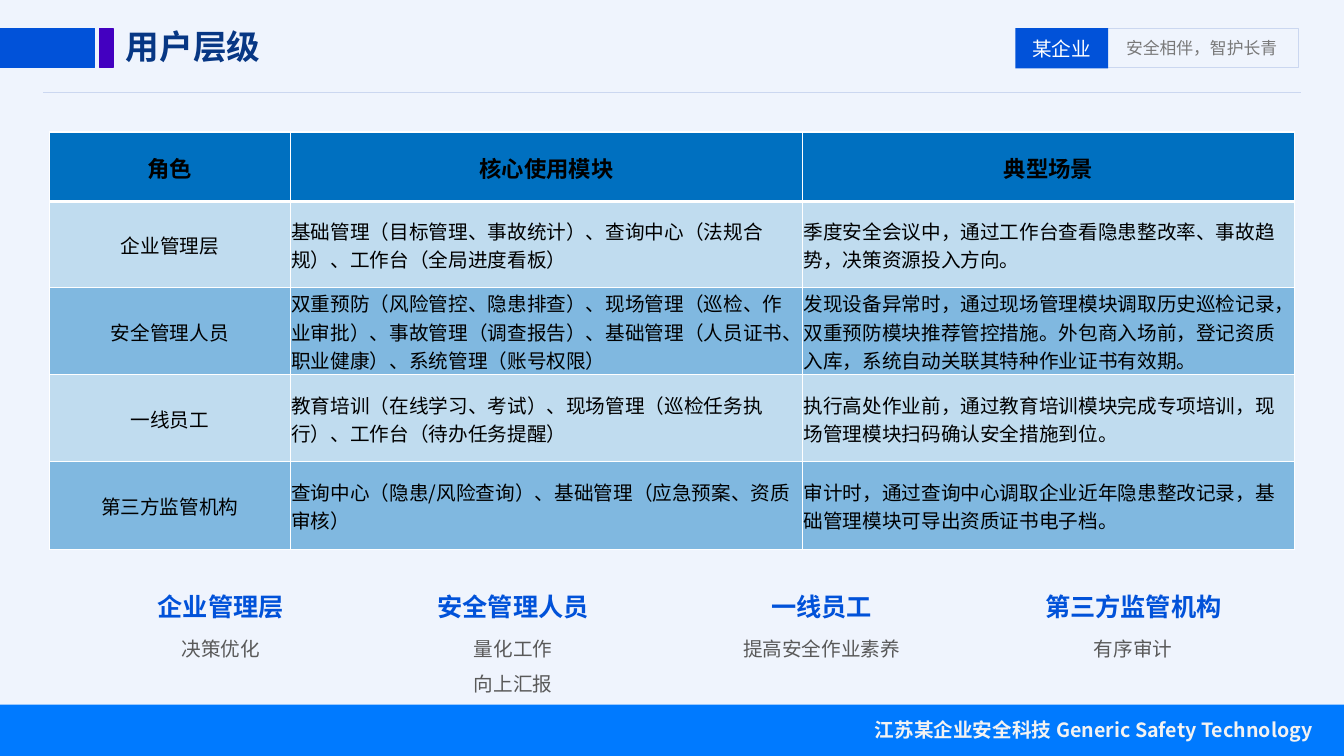
"""Build the user-level slide: roles, their modules and scenarios, and the benefits for each."""
from dataclasses import dataclass
from typing import Optional

from pptx import Presentation
from pptx.dml.color import RGBColor
from pptx.enum.shapes import MSO_CONNECTOR, MSO_SHAPE
from pptx.enum.text import MSO_ANCHOR, MSO_AUTO_SIZE, PP_ALIGN
from pptx.oxml.ns import qn
from pptx.oxml.xmlchemy import OxmlElement
from pptx.util import Inches, Pt


@dataclass(frozen=True)
class Theme:
    background: str = "EFF4FD"
    primary: str = "0152D9"
    accent: str = "4300C0"
    footer: str = "007AFF"
    footer_text: str = "F2F2F2"
    rule: str = "CBD7F0"
    title: str = "073784"
    slogan: str = "787878"
    detail: str = "595959"
    header: str = "0070C0"
    bands: tuple[str, str] = ("C0DCEF", "80B8E0")
    black: str = "000000"
    white: str = "FFFFFF"
    latin: str = "Arial"
    cjk: str = "Noto Sans CJK SC"
    title_size: float = 24
    heading_size: float = 18
    header_size: float = 16
    body_size: float = 14
    slogan_size: float = 12


THEME = Theme()


@dataclass(frozen=True)
class Style:
    size: float
    color: str
    font: str = THEME.cjk
    bold: bool = False
    align: PP_ALIGN = PP_ALIGN.LEFT
    spacing: Optional[float] = None


@dataclass(frozen=True)
class Bar:
    left: float
    top: float
    width: float
    height: float
    fill: Optional[str] = None
    line: Optional[str] = None
    label: str = ""


@dataclass(frozen=True)
class Label:
    left: float
    top: float
    width: float
    height: float
    lines: tuple[str, ...]
    style: Style
    wrap: bool = True


@dataclass(frozen=True)
class Benefit:
    left: float
    role: str
    gains: tuple[str, ...]


HEADER_STYLE = Style(THEME.header_size, THEME.black, bold=True, align=PP_ALIGN.CENTER)
ROLE_STYLE = Style(THEME.body_size, THEME.black, align=PP_ALIGN.CENTER)
CELL_STYLE = Style(THEME.body_size, THEME.black)
BADGE_STYLE = Style(THEME.body_size, THEME.white, align=PP_ALIGN.CENTER)
BENEFIT_STYLE = Style(THEME.heading_size, THEME.primary, THEME.latin, True, PP_ALIGN.CENTER, 1.5)
GAIN_STYLE = Style(THEME.body_size, THEME.detail, THEME.latin, False, PP_ALIGN.CENTER, 1.5)

BARS = (
    Bar(10.45, 0.28, 2.43, 0.39, line=THEME.rule),
    Bar(10.07, 0.28, 0.92, 0.4, THEME.primary, label="某企业"),
    Bar(0, 0.28, 0.94, 0.39, THEME.primary, THEME.primary),
    Bar(0.99, 0.28, 0.13, 0.39, THEME.accent, THEME.accent),
    Bar(0, 6.99, 13.33, 0.51, THEME.footer),
)
LABELS = (
    Label(11.07, 0.33, 1.7, 0.3, ("安全相伴，智护长青",),
          Style(THEME.slogan_size, THEME.slogan), wrap=False),
    Label(7.88, 7.07, 5.24, 0.34, ("江苏某企业安全科技 Generic Safety Technology",),
          Style(THEME.body_size, THEME.footer_text, bold=True, align=PP_ALIGN.RIGHT)),
    Label(1.15, 0.21, 5.37, 0.5, ("用户层级",),
          Style(THEME.title_size, THEME.title, THEME.latin, True)),
)
COLUMN_WIDTHS = (2.39, 5.08, 4.88)
ROW_HEIGHTS = (0.69, 0.85, 0.87, 0.86, 0.87)
ROLE_ROWS = (
    ("角色", "核心使用模块", "典型场景"),
    ("企业管理层",
     "基础管理（目标管理、事故统计）、查询中心（法规合规）、工作台（全局进度看板）",
     "季度安全会议中，通过工作台查看隐患整改率、事故趋势，决策资源投入方向。"),
    ("安全管理人员",
     "双重预防（风险管控、隐患排查）、现场管理（巡检、作业审批）、事故管理（调查报告）、"
     "基础管理（人员证书、职业健康）、系统管理（账号权限）",
     "发现设备异常时，通过现场管理模块调取历史巡检记录，双重预防模块推荐管控措施。"
     "外包商入场前，登记资质入库，系统自动关联其特种作业证书有效期。"),
    ("一线员工",
     "教育培训（在线学习、考试）、现场管理（巡检任务执行）、工作台（待办任务提醒）",
     "执行高处作业前，通过教育培训模块完成专项培训，现场管理模块扫码确认安全措施到位。"),
    ("第三方监管机构",
     "查询中心（隐患/风险查询）、基础管理（应急预案、资质审核）",
     "审计时，通过查询中心调取企业近年隐患整改记录，基础管理模块可导出资质证书电子档。"),
)
BENEFITS = (
    Benefit(1.05, "企业管理层", ("决策优化",)),
    Benefit(3.95, "安全管理人员", ("量化工作", "向上汇报")),
    Benefit(7.01, "一线员工", ("提高安全作业素养",)),
    Benefit(10.1, "第三方监管机构", ("有序审计",)),
)


def write(frame, lines: tuple[str, ...], style: Style) -> None:
    frame.text = "\n".join(lines)
    for paragraph in frame.paragraphs:
        paragraph.alignment = style.align
        if style.spacing:
            paragraph.line_spacing = style.spacing
        font = paragraph.font
        font.name, font.size, font.bold = style.font, Pt(style.size), style.bold
        font.color.rgb = RGBColor.from_string(style.color)
        east_asian = OxmlElement("a:ea")
        east_asian.set("typeface", THEME.cjk)
        paragraph._p.pPr.find(qn("a:defRPr")).append(east_asian)


def draw_bar(slide, bar: Bar) -> None:
    box = map(Inches, (bar.left, bar.top, bar.width, bar.height))
    shape = slide.shapes.add_shape(MSO_SHAPE.RECTANGLE, *box)
    shape.shadow.inherit = False
    if bar.fill:
        shape.fill.solid()
        shape.fill.fore_color.rgb = RGBColor.from_string(bar.fill)
    else:
        shape.fill.background()
    if bar.line:
        shape.line.color.rgb = RGBColor.from_string(bar.line)
        shape.line.width = Pt(1)
    else:
        shape.line.fill.background()
    if bar.label:
        shape.text_frame.vertical_anchor = MSO_ANCHOR.MIDDLE
        write(shape.text_frame, (bar.label,), BADGE_STYLE)


def draw_label(slide, label: Label) -> None:
    box = map(Inches, (label.left, label.top, label.width, label.height))
    frame = slide.shapes.add_textbox(*box).text_frame
    frame.word_wrap = label.wrap
    frame.auto_size = MSO_AUTO_SIZE.SHAPE_TO_FIT_TEXT
    write(frame, label.lines, label.style)


def draw_rule(slide) -> None:
    rule = slide.shapes.add_connector(
        MSO_CONNECTOR.STRAIGHT, Inches(0.43), Inches(0.92), Inches(12.9), Inches(0.92))
    rule.line.color.rgb = RGBColor.from_string(THEME.rule)
    rule.line.width = Pt(0.5)
    rule._element.spPr.append(OxmlElement("a:effectLst"))


def add_borders(cell, top: float, bottom: float) -> None:
    properties = cell._tc.get_or_add_tcPr()
    for position, (side, width) in enumerate(zip("LRTB", (1, 1, top, bottom))):
        border = OxmlElement(f"a:ln{side}")
        border.set("w", str(Pt(width)))
        fill, color = OxmlElement("a:solidFill"), OxmlElement("a:srgbClr")
        color.set("val", THEME.white)
        fill.append(color)
        border.append(fill)
        properties.insert(position, border)


def draw_table(slide) -> None:
    table = slide.shapes.add_table(
        len(ROW_HEIGHTS), len(COLUMN_WIDTHS), Inches(0.49), Inches(1.31),
        Inches(sum(COLUMN_WIDTHS)), Inches(sum(ROW_HEIGHTS))).table
    for column, width in zip(table.columns, COLUMN_WIDTHS):
        column.width = Inches(width)
    for index, (row, height, texts) in enumerate(zip(table.rows, ROW_HEIGHTS, ROLE_ROWS)):
        row.height = Inches(height)
        fill = THEME.bands[(index - 1) % 2] if index else THEME.header
        for place, (cell, text) in enumerate(zip(row.cells, texts)):
            cell.margin_left = cell.margin_right = cell.margin_top = Inches(0.01)
            cell.margin_bottom = 0
            cell.vertical_anchor = MSO_ANCHOR.MIDDLE
            cell.fill.solid()
            cell.fill.fore_color.rgb = RGBColor.from_string(fill)
            add_borders(cell, 3 if index == 1 else 1, 3 if index == 0 else 1)
            body = CELL_STYLE if place else ROLE_STYLE
            write(cell.text_frame, (text,), body if index else HEADER_STYLE)


def draw_benefit(slide, benefit: Benefit) -> None:
    draw_label(slide, Label(benefit.left + 0.01, 5.67, 2.26, 0.55, (benefit.role,), BENEFIT_STYLE))
    height = 0.09 + 0.36 * len(benefit.gains)
    draw_label(slide, Label(benefit.left, 6.15, 2.28, height, benefit.gains, GAIN_STYLE))


def main() -> None:
    deck = Presentation()
    deck.slide_width, deck.slide_height = Inches(13.33), Inches(7.5)
    slide = deck.slides.add_slide(deck.slide_layouts[6])
    slide.background.fill.solid()
    slide.background.fill.fore_color.rgb = RGBColor.from_string(THEME.background)
    draw_rule(slide)
    for bar in BARS:
        draw_bar(slide, bar)
    for label in LABELS:
        draw_label(slide, label)
    draw_table(slide)
    for benefit in BENEFITS:
        draw_benefit(slide, benefit)
    deck.save("out.pptx")


if __name__ == "__main__":
    main()
